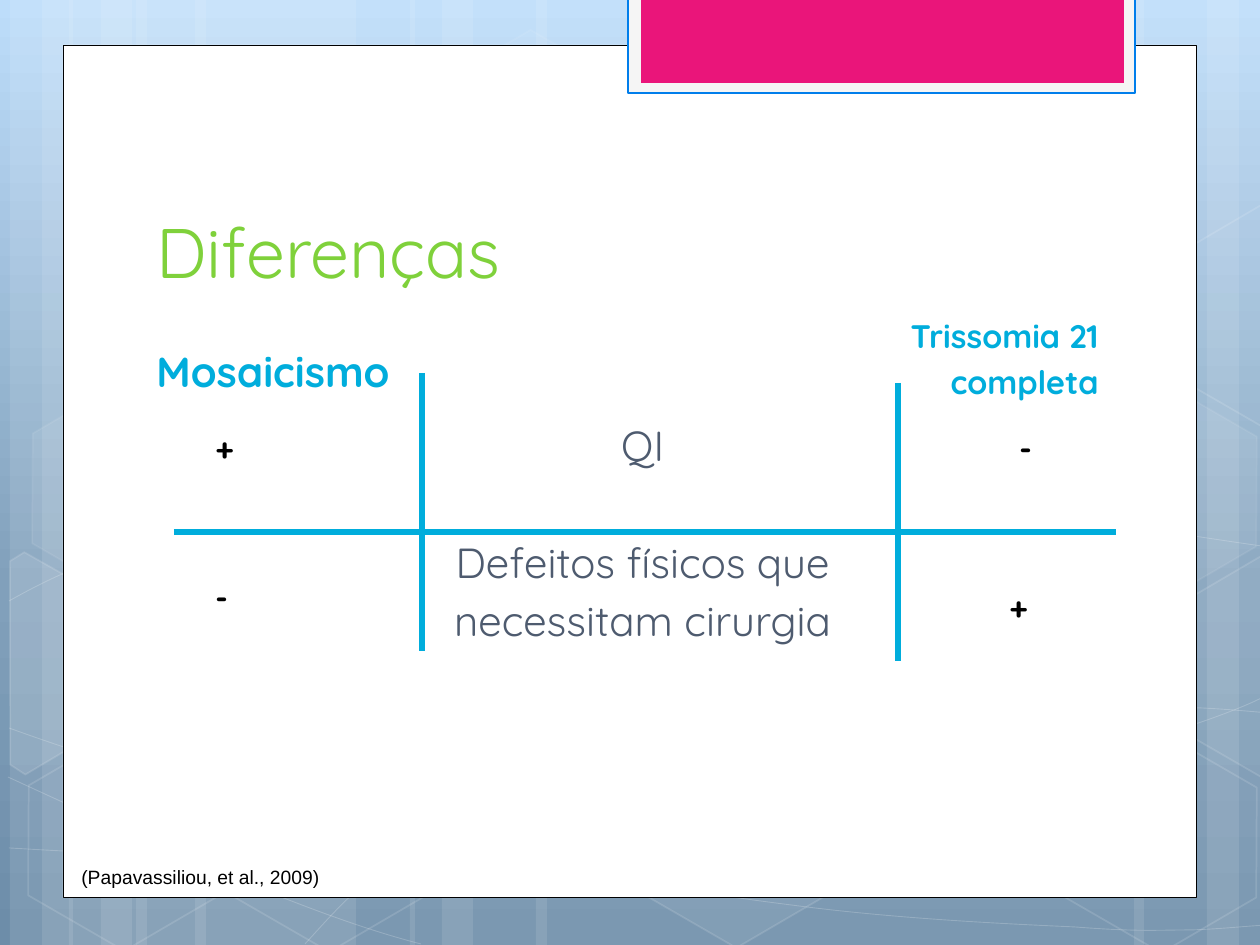
from copy import deepcopy
from math import cos, radians, sin
from lxml.etree import SubElement
from pptx import Presentation
from pptx.dml.color import RGBColor
from pptx.enum.shapes import MSO_CONNECTOR, MSO_SHAPE
from pptx.enum.text import MSO_ANCHOR, PP_ALIGN
from pptx.oxml.ns import qn
from pptx.util import Pt

SCALE = 914400 / 126
TILT = 30
COLORS = {
    "white": "FFFFFF", "black": "000000", "mist": "F5F5F5", "blue": "007EEB",
    "pink": "EA157A", "green": "7FD13B", "cyan": "00ADDC", "slate": "4E5B6F",
}
SKY = [(0, "BDDDFA"), (0.62, "81A0BB"), (1, "6D8DA9")]

# Each stripe is left, width.
STRIPES = [(x + dx, w) for x, wide in ((10, 220), (69, 220), (410, 388))
           for dx, w in ((0, 63), (32, 105), (126, wide))]
STRIPES += [(924, 220), (1134, 105), (1207, 63)]

# Each curve is a start point, then three points for each Bezier piece.
CURVES = [
    [(9, 848), (77, 852), (145, 856), (239, 854), (334, 853), (451, 851),
     (577, 838), (703, 825), (882, 802), (998, 777), (1113, 753),
     (1231, 716), (1269, 694)],
    [(9, 601), (45, 581), (82, 562), (152, 543), (224, 524), (326, 496),
     (437, 488), (549, 479), (685, 478), (824, 488), (963, 498),
     (1193, 537), (1269, 547)],
    [(8, 777), (160, 847), (311, 916), (421, 944)],
    [(9, 728), (48, 742), (88, 756), (161, 776), (234, 795), (344, 827),
     (450, 848), (554, 869), (687, 892), (791, 905), (896, 919),
     (1008, 924), (1075, 927), (1140, 932), (1158, 930), (1191, 930),
     (1223, 929), (1246, 926), (1269, 925)],
    [(305, 944), (328, 919), (350, 893), (381, 871), (411, 848), (454, 823),
     (489, 805), (524, 789), (546, 780), (592, 767), (638, 754), (722, 737),
     (766, 728), (811, 719), (818, 719), (857, 717), (896, 713), (958, 709),
     (1000, 708), (1045, 707), (1116, 708), (1116, 708), (1144, 708),
     (1173, 708), (1201, 708), (1223, 709), (1245, 711), (1268, 713)],
]

# Each hexagon is left, top, fill opacity, line opacity.
HEXES = [(421, 45, 4, 8), (626, 742, 6, 12), (14, 745, 0, 12),
         (18, 393, 7, 8), (219, 746, 0, 12), (1051, 747, 0, 12),
         (1051, 396, 7, 8)]
LEFT = [(10, 561), (24, 552), (121, 607), (120, 718), (25, 774), (10, 765)]
RIGHT = [(1167, 611), (1261, 556), (1271, 562), (1271, 772), (1263, 777),
         (1167, 722)]

TITLE = {"size": Pt(40), "name": "Quicksand", "color": "green"}
HEAD = {"size": Pt(24), "name": "Quicksand", "color": "cyan", "bold": True}
SMALL = {**HEAD, "size": Pt(18.6)}
BODY = {**TITLE, "size": Pt(24), "color": "slate"}
SIGN = {**HEAD, "size": Pt(18), "color": "black"}
CITE = {"size": Pt(11), "name": "Arial", "color": "black"}


def emu(*px):
    return [round(n * SCALE) for n in px]


def tint(fill, name):
    fill.solid()
    fill.fore_color.rgb = RGBColor.from_string(COLORS[name])


def fade(shape, route, alpha):
    """Set the opacity, in percent, of the solid fill at the route."""
    node = shape._element.spPr
    for tag in (*route, "a:solidFill", "a:srgbClr"):
        node = node.find(qn(tag))
    SubElement(node, qn("a:alpha")).set("val", str(alpha * 1000))


def style(shape, fill=None, line=None, width=1, alpha=100, glow=100):
    shape.shadow.inherit = False
    if fill:
        tint(shape.fill, fill)
        if alpha < 100:
            fade(shape, (), alpha)
    else:
        shape.fill.background()
    if line:
        tint(shape.line.fill, line)
        shape.line.width = Pt(width)
        if glow < 100:
            fade(shape, ("a:ln",), glow)
    else:
        shape.line.fill.background()


def block(slide, box, kind=MSO_SHAPE.RECTANGLE, **look):
    shape = slide.shapes.add_shape(kind, *emu(*box))
    style(shape, **look)
    return shape


def hexa(slide, x, y, alpha, glow):
    shape = block(slide, (x, y, 220, 191), MSO_SHAPE.HEXAGON,
                  fill="white" if alpha else None, line="white",
                  alpha=alpha, glow=glow)
    shape.adjustments[0] = 0.285
    shape.rotation = TILT


def outline(slide, points, close, **look):
    path = slide.shapes.build_freeform(*points[0], scale=SCALE)
    path.add_line_segments(points[1:], close=close)
    shape = path.convert_to_shape()
    style(shape, line="white", **look)
    return shape


def curve(slide, nodes):
    """Draw the nodes as a chain, then join each three into a Bezier piece."""
    shape = outline(slide, nodes, False, width=0.5, glow=20)
    lines = list(shape._element.iter(qn("a:lnTo")))
    for i in range(0, len(lines), 3):
        bend = SubElement(lines[i].getparent(), qn("a:cubicBezTo"))
        for line in lines[i:i + 3]:
            bend.append(line[0])
            line.getparent().remove(line)


def chip(slide, points, mid, **look):
    """A cut hexagon, built upright about its middle and then tilted."""
    cx, cy = mid
    c, s = cos(radians(TILT)), sin(radians(TILT))
    flat = [(cx + (x - cx) * c + (y - cy) * s,
             cy - (x - cx) * s + (y - cy) * c) for x, y in points]
    outline(slide, flat, True, glow=12, **look).rotation = TILT


def label(slide, box, lines, look, align=PP_ALIGN.LEFT,
          anchor=MSO_ANCHOR.TOP, gap=0, wrap=True):
    frame = slide.shapes.add_textbox(*emu(*box)).text_frame
    frame.word_wrap = wrap
    frame.vertical_anchor = anchor
    for i, text in enumerate(lines):
        para = frame.paragraphs[0] if i == 0 else frame.add_paragraph()
        para.alignment = align
        para.space_before = Pt(gap if i else 0)
        run = para.add_run()
        run.text = text
        for key, value in look.items():
            if key == "color":
                tint(run.font.fill, value)
            else:
                setattr(run.font, key, value)
    return frame


def rule(slide, *ends):
    line = slide.shapes.add_connector(MSO_CONNECTOR.STRAIGHT, *emu(*ends))
    tint(line.line.fill, "cyan")
    line.line.width = Pt(3)
    SubElement(line._element.spPr, qn("a:effectLst"))


def sky(slide):
    fill = slide.background.fill
    fill.gradient()
    fill.gradient_angle = 270
    first = slide.background._cSld.find(".//" + qn("a:gs"))
    first.addnext(deepcopy(first))
    for stop, (pos, color) in zip(fill.gradient_stops, SKY):
        stop.position = pos
        stop.color.rgb = RGBColor.from_string(color)


def decor(slide):
    for x, w in STRIPES:
        block(slide, (x, 0, w, 945), fill="white", alpha=10)
    for nodes in CURVES:
        curve(slide, nodes)
    for spot in HEXES:
        hexa(slide, *spot)
    chip(slide, LEFT, (45, 674), fill="white", alpha=10)
    chip(slide, RIGHT, (1241, 655), fill="white", alpha=4)
    chip(slide, [(x, y - 351) for x, y in RIGHT], (1241, 304))


def main():
    deck = Presentation()
    deck.slide_width, deck.slide_height = emu(1260, 945)
    slide = deck.slides.add_slide(deck.slide_layouts[6])
    sky(slide)
    decor(slide)
    block(slide, (63, 45, 1134, 853), fill="white", line="black", width=0.5)
    block(slide, (628, -3, 507, 96), fill="mist", line="blue", width=1.25)
    block(slide, (641, -3, 483, 86), fill="pink")

    low = MSO_ANCHOR.BOTTOM
    label(slide, (144, 141, 968, 158), ["Diferenças"], TITLE, anchor=low)
    label(slide, (144, 314, 421, 88), ["Mosaicismo"], HEAD, anchor=low)
    body = label(slide, (407, 413, 471, 391),
                 ["QI", "Defeitos físicos que", "necessitam cirurgia"],
                 BODY, PP_ALIGN.CENTER, gap=4.8)
    body.paragraphs[1].space_before = Pt(38)
    label(slide, (690, 319, 421, 88), ["Trissomia 21", "completa"], SMALL,
          PP_ALIGN.RIGHT, low, gap=3.7)
    for text, x, y, w in (("+", 203, 423, 44), ("+", 997, 582, 44),
                          ("-", 1007, 423, 39), ("-", 203, 572, 39)):
        label(slide, (x, y, w, 50), [text], SIGN, wrap=False)

    rule(slide, 422, 373, 422, 651)
    rule(slide, 174, 532, 1116, 532)
    rule(slide, 898, 383, 898, 661)
    label(slide, (69, 859, 280, 37), ["(Papavassiliou, et al., 2009)"], CITE)
    deck.save("out.pptx")


if __name__ == "__main__":
    main()
